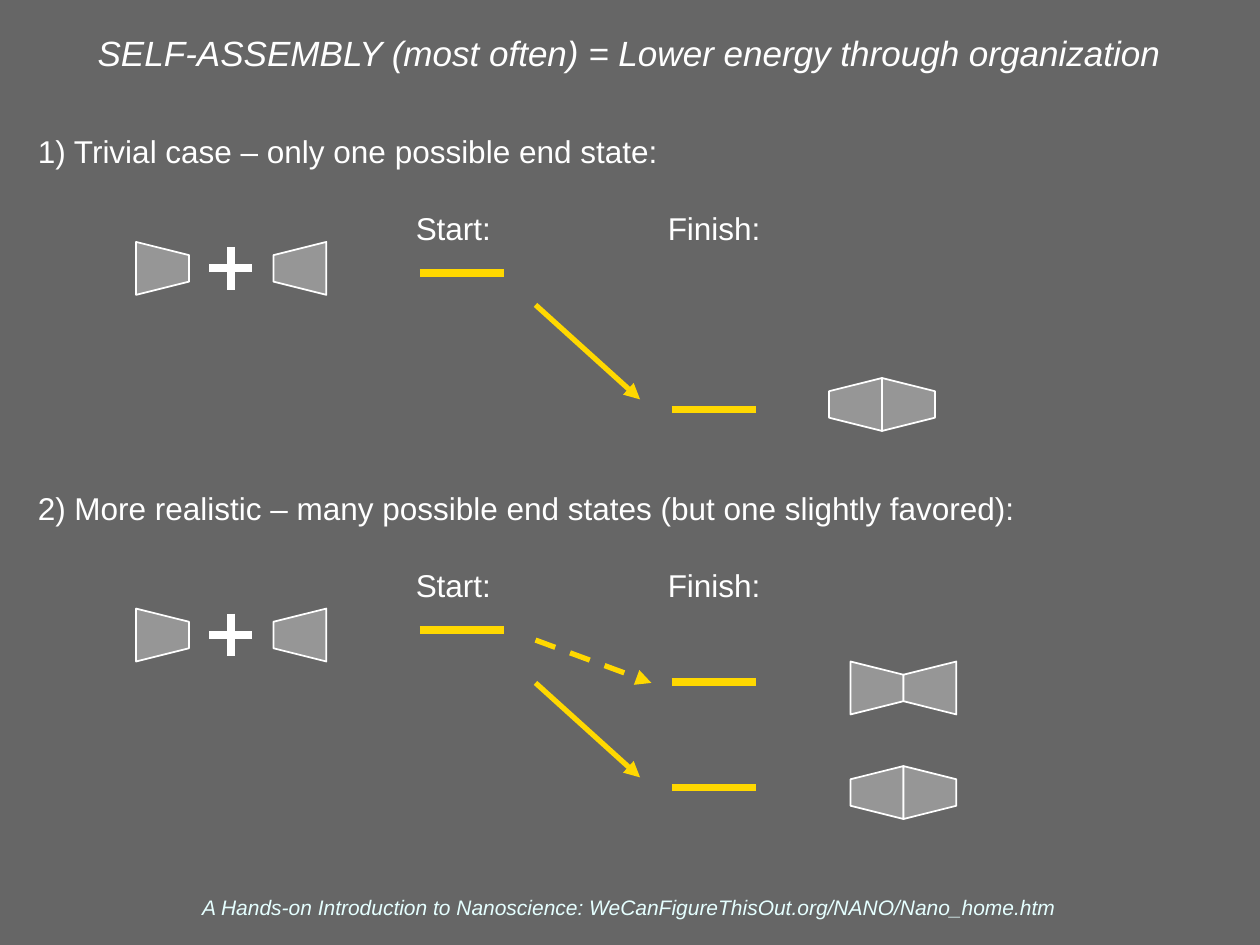
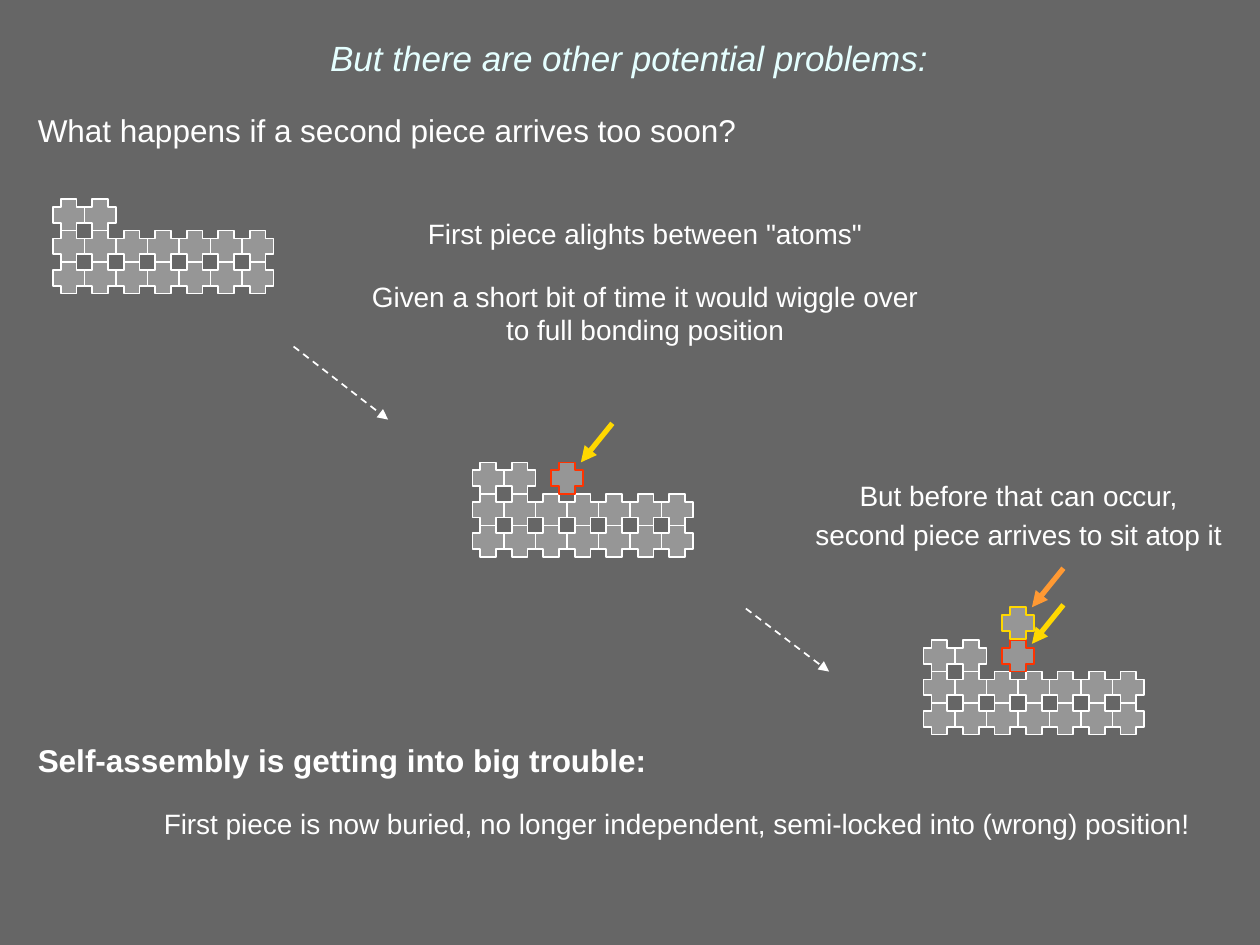
from typing import NamedTuple

from lxml.etree import SubElement
from pptx import Presentation
from pptx.dml.color import RGBColor
from pptx.enum.dml import MSO_LINE
from pptx.enum.shapes import MSO_CONNECTOR, MSO_SHAPE
from pptx.enum.text import MSO_ANCHOR, MSO_AUTO_SIZE, PP_ALIGN
from pptx.oxml.ns import qn
from pptx.util import Inches, Pt

COLORS = {
    "background": "666666",
    "text": "FFFFFF",
    "pale": "E5FFFF",
    "piece": "969696",
    "energy": "FFD800",
    "first": "FF3300",
    "second": "FF9933",
}
FONT = "Arial"
TITLE_AND_BODY, TITLE_ONLY = 1, 5
PIECE = 0.42  # side of a wedge-shaped piece
ATOM = 0.25  # side of a cross-shaped atom
CRYSTAL_ROWS = (2, 7, 7)
START, FINISH = 3.33, 5.33  # left ends of the energy levels


class Line(NamedTuple):
    text: str
    size: float = 18
    before: float = 0
    bold: bool = False
    italic: bool = False
    color: str = "text"
    indent: float = 0


class EndState(NamedTuple):
    """One possible outcome; heights are measured from the top of its case."""
    level: float
    arrow: tuple
    pair: tuple
    bulging: bool = True
    dashed: bool = False


class Arrival(NamedTuple):
    """A late atom; heights are measured from the top of its crystal."""
    top: float
    outline: str
    arrow: str
    tip: float


def rgb(name):
    return RGBColor.from_string(COLORS[name])


# Text
def place(shape, left, top, width, height):
    shape.left, shape.top = Inches(left), Inches(top)
    shape.width, shape.height = Inches(width), Inches(height)


def write(shape, lines, align=PP_ALIGN.LEFT, anchor=MSO_ANCHOR.TOP):
    frame = shape.text_frame
    frame.word_wrap = True
    frame.auto_size = MSO_AUTO_SIZE.NONE
    frame.vertical_anchor = anchor
    frame.margin_left = frame.margin_right = Inches(0.05)
    frame.margin_top = frame.margin_bottom = Inches(0.05)
    for index, line in enumerate(lines):
        paragraph = frame.add_paragraph() if index else frame.paragraphs[0]
        paragraph.alignment = align
        paragraph.space_before = Pt(line.before)
        properties = paragraph._p.get_or_add_pPr()
        properties.set("marL", str(Inches(line.indent)))
        properties.set("indent", "0")
        SubElement(properties, qn("a:buNone"))
        run = paragraph.add_run()
        run.text = line.text
        run.font.name, run.font.size = FONT, Pt(line.size)
        run.font.bold, run.font.italic = line.bold, line.italic
        run.font.color.rgb = rgb(line.color)


def add_text(slide, box, lines, **layout):
    textbox = slide.shapes.add_textbox(*map(Inches, box))
    write(textbox, lines, **layout)


def add_title(slide, box, text, color="text"):
    place(slide.shapes.title, *box)
    write(slide.shapes.title, [Line(text, 20, italic=True, color=color)],
          align=PP_ALIGN.CENTER, anchor=MSO_ANCHOR.MIDDLE)


def add_footer(slide):
    add_text(slide, (0.33, 7.06, 9.33, 0.29),
             [Line("A Hands-on Introduction to Nanoscience: "
                   "WeCanFigureThisOut.org/NANO/Nano_home.htm",
                   12, italic=True, color="pale")],
             align=PP_ALIGN.CENTER, anchor=MSO_ANCHOR.BOTTOM)


# Lines and pieces
def add_line(shapes, start, end, color, width, arrow=False, dashed=False):
    line = shapes.add_connector(MSO_CONNECTOR.STRAIGHT,
                                *map(Inches, (*start, *end)))
    line.line.color.rgb = rgb(color)
    line.line.width = Pt(width)
    if dashed:
        line.line.dash_style = MSO_LINE.DASH
    if arrow:
        SubElement(line.line._get_or_add_ln(), qn("a:tailEnd"), type="triangle")
    SubElement(line._element.spPr, qn("a:effectLst"))


def paint_piece(shape, outline="text"):
    shape.shadow.inherit = False
    shape.fill.solid()
    shape.fill.fore_color.rgb = rgb("piece")
    shape.line.color.rgb = rgb(outline)
    shape.line.width = Pt(1)


def add_wedge(slide, left, top, wide_left):
    right = left + PIECE
    wide, narrow = (left, right) if wide_left else (right, left)
    corners = [(wide, top), (narrow, top + PIECE / 4),
               (narrow, top + PIECE * 3 / 4), (wide, top + PIECE)]
    points = [(Inches(x), Inches(y)) for x, y in corners]
    outline = slide.shapes.build_freeform(*points[0], scale=1.0)
    outline.add_line_segments(points[1:], close=True)
    paint_piece(outline.convert_to_shape())


def add_atom(shapes, left, top, outline="text"):
    atom = shapes.add_shape(MSO_SHAPE.CROSS,
                            *map(Inches, (left, top, ATOM, ATOM)))
    atom.adjustments[0] = 0.25
    paint_piece(atom, outline)


# Slide 1: energy before and after assembly
def add_level(slide, left, y):
    add_line(slide.shapes, (left, y), (left + 0.67, y), "energy", 4.5)


def add_case(slide, top, pieces_top, end_states):
    # Column labels
    for left, label in ((START, "Start:"), (FINISH, "Finish:")):
        add_text(slide, (left - 0.08, top + 0.61, 1.2, 0.38), [Line(label)])

    # Separate pieces with a plus sign
    pieces_top += top
    add_wedge(slide, 1.08, pieces_top, wide_left=True)
    add_wedge(slide, 2.17, pieces_top, wide_left=False)
    x, y, arm = 1.83, pieces_top + PIECE / 2, 0.17
    add_line(slide.shapes, (x - arm, y), (x + arm, y), "text", 4.5)
    add_line(slide.shapes, (x, y - arm), (x, y + arm), "text", 4.5)

    # Energy levels, transitions and joined pieces
    add_level(slide, START, top + 1.17)
    for state in end_states:
        add_level(slide, FINISH, top + state.level)
        from_y, to_x, to_y = state.arrow
        add_line(slide.shapes, (4.25, top + from_y), (to_x, top + to_y),
                 "energy", 3, arrow=True, dashed=state.dashed)
        left, pair_top = state.pair
        for side in (0, 1):
            add_wedge(slide, left + side * PIECE, top + pair_top,
                      wide_left=(side == 1) == state.bulging)


def build_energy_slide(prs):
    slide = prs.slides.add_slide(prs.slide_layouts[TITLE_AND_BODY])
    add_footer(slide)
    add_title(slide, (0.33, 0.08, 9.33, 0.67),
              "SELF-ASSEMBLY (most often) = Lower energy through organization")

    # One possible end state
    trivial = slide.placeholders[1]
    place(trivial, 0.25, 1, 9.5, 0.6)
    write(trivial, [Line("1) Trivial case – only one possible end state:")])
    add_case(slide, 1, 0.92,
             [EndState(2.25, arrow=(1.42, 5.08, 2.17), pair=(6.58, 2))])

    # Several possible end states
    add_text(slide, (0.25, 3.83, 9.5, 0.6), [
        Line("2) More realistic – many possible end states "
             "(but one slightly favored):")])
    add_case(slide, 3.83, 1, [
        EndState(1.58, arrow=(1.25, 5.17, 1.59), pair=(6.75, 1.42),
                 bulging=False, dashed=True),
        EndState(2.42, arrow=(1.59, 5.08, 2.34), pair=(6.75, 2.25)),
    ])


# Slide 2: a crystal growing badly
def add_crystal(slide, left, top, arrivals=()):
    shapes = slide.shapes.add_group_shape().shapes
    for row, count in enumerate(CRYSTAL_ROWS):
        for column in range(count):
            add_atom(shapes, left + column * ATOM, top + row * ATOM)
    for arrival in arrivals:
        add_atom(shapes, left + 2.5 * ATOM, top + arrival.top, arrival.outline)
    for arrival in arrivals:
        tip_x, tip_y = left + 0.86, top + arrival.tip
        add_line(shapes, (tip_x + 0.25, tip_y - 0.31), (tip_x, tip_y),
                 arrival.arrow, 3, arrow=True)


def build_problem_slide(prs):
    slide = prs.slides.add_slide(prs.slide_layouts[TITLE_ONLY])
    add_title(slide, (0.33, 0.17, 9.33, 0.58),
              "But there are other potential problems:", "pale")
    add_text(slide, (0.25, 0.83, 9.5, 0.38),
             [Line("What happens if a second piece arrives too soon?")])

    # Three stages of growth
    add_crystal(slide, 0.42, 1.58)
    add_crystal(slide, 3.75, 3.67, [Arrival(0, "first", "energy", 0)])
    add_crystal(slide, 7.33, 5.08, [Arrival(0, "first", "energy", 0.03),
                                    Arrival(-0.26, "energy", "second", -0.26)])
    for start, end in (((2.33, 2.75), (3.08, 3.33)),
                       ((5.92, 4.83), (6.58, 5.33))):
        add_line(slide.shapes, start, end, "text", 1, arrow=True, dashed=True)

    # Explanations
    add_text(slide, (2.83, 1.67, 4.58, 1.3), [
        Line('First piece alights between "atoms"', 16),
        Line("Given a short bit of time it would wiggle over "
             "to full bonding position", 16, before=16.5),
    ], align=PP_ALIGN.CENTER)
    add_text(slide, (6.25, 3.75, 3.67, 0.65), [
        Line("But before that can occur,", 16),
        Line("second piece arrives to sit atop it", 16, before=3),
    ], align=PP_ALIGN.CENTER)
    add_text(slide, (0.25, 5.83, 9.5, 0.86), [
        Line("Self-assembly is getting into big trouble:", bold=True),
        Line("First piece is now buried, no longer independent, "
             "semi-locked into (wrong) position!", 16, before=16, indent=1),
    ])


def main():
    prs = Presentation()
    prs.slide_width, prs.slide_height = Inches(10), Inches(7.5)
    background = prs.slide_master.background.fill
    background.solid()
    background.fore_color.rgb = rgb("background")
    build_energy_slide(prs)
    build_problem_slide(prs)
    prs.save("out.pptx")


if __name__ == "__main__":
    main()
